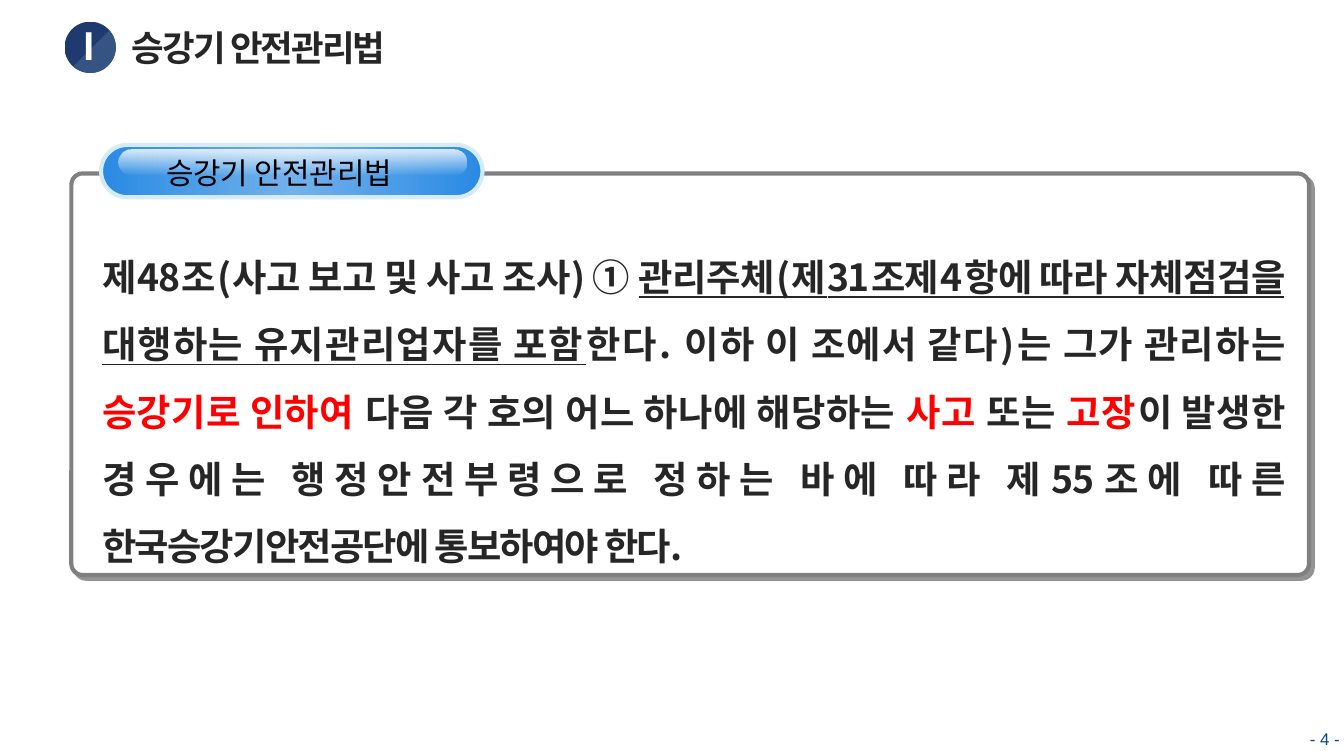
import pptx
import pptx.util
import pptx.dml.color
import pptx.enum.shapes
import pptx.enum.text
import pptx.oxml
import pptx.oxml.ns

Cm = pptx.util.Cm
Pt = pptx.util.Pt
Kind = pptx.enum.shapes.MSO_SHAPE
Align = pptx.enum.text.PP_ALIGN
qn = pptx.oxml.ns.qn
SPACE = pptx.oxml.ns.nsdecls("a")

SANS = "Noto Sans CJK KR"
DARK, RED, WHITE, BLACK = "262626", "FF0000", "FFFFFF", "000000"
NAVY, BLUE = "00488A", "2A8AE3"
NAME = "승강기 안전관리법"

LAW = [
    ("제48조(사고 보고 및 사고 조사) ① ", DARK, False),
    ("관리주체(제31조제4항에 따라 자체점검을 대행하는 유지관리업자를 포함", DARK, True),
    ("한다. 이하 이 조에서 같다)는 그가 관리하는 ", DARK, False),
    ("승강기로 인하여 ", RED, False),
    ("다음 각 호의 어느 하나에 해당하는 ", DARK, False),
    ("사고", RED, False),
    (" 또는 ", DARK, False),
    ("고장", RED, False),
    ("이 발생한 경우에는 행정안전부령으로 정하는 바에 따라 제55조에 따른 "
     "한국승강기안전공단에 통보하여야 한다.", DARK, False),
]
DISC = [(52, "1F3A6F", 100), (52, "355383", 100)]
PILL = [(0, BLUE, 100), (50, "71B1EC", 100), (100, BLUE, 100)]
GLOSS = [(0, WHITE, 83), (100, WHITE, 0)]


def tint(code):
    return pptx.dml.color.RGBColor.from_string(code)


def place(item, box):
    item.left, item.top, item.width, item.height = map(Cm, box)


def style(run, size, code, bold=False, face=SANS, gap=0):
    font = run.font
    font.size, font.bold, font.name = Pt(size), bold, face
    font.color.rgb = tint(code)
    props = run._r.get_or_add_rPr()
    if gap:
        props.set("spc", str(gap * 100))
    latin = props.find(qn("a:latin"))
    latin.addnext(pptx.oxml.parse_xml(f'<a:ea {SPACE} typeface="{SANS}"/>'))


def setup(item, wrap, pad=None):
    frame = item.text_frame
    frame.word_wrap = wrap
    frame.auto_size = pptx.enum.text.MSO_AUTO_SIZE.NONE
    frame.vertical_anchor = pptx.enum.text.MSO_ANCHOR.MIDDLE
    if pad is not None:
        frame.margin_left = frame.margin_right = Cm(pad)
        frame.margin_top = frame.margin_bottom = Cm(pad / 2)
    return frame


def write(item, text, align, wrap=False, pad=None, **look):
    frame = setup(item, wrap, pad)
    frame.text = text
    line = frame.paragraphs[0]
    line.alignment = align
    style(line.runs[0], **look)


def note(box):
    return slide.shapes.add_textbox(*map(Cm, box))


def shape(kind, box, fill, line=None, bend=None):
    item = slide.shapes.add_shape(kind, *map(Cm, box))
    item.shadow.inherit = False
    item.fill.solid()
    item.fill.fore_color.rgb = tint(fill)
    if bend is not None:
        item.adjustments[0] = bend
    if line:
        item.line.color.rgb = tint(line)
        item.line.width = Pt(2.25)
    else:
        item.line.fill.background()
    return item


def blend(item, stops, angle):
    marks = "".join(
        f'<a:gs pos="{at * 1000}"><a:srgbClr val="{code}">'
        f'<a:alpha val="{show * 1000}"/></a:srgbClr></a:gs>'
        for at, code, show in stops)
    props = item._element.spPr
    props.replace(props.find(qn("a:solidFill")), pptx.oxml.parse_xml(
        f'<a:gradFill {SPACE} rotWithShape="1"><a:gsLst>{marks}</a:gsLst>'
        f'<a:lin ang="{angle * 60000}" scaled="0"/></a:gradFill>'))


def shade(item, code, show, far, angle):
    item._element.spPr.find(qn("a:effectLst")).append(pptx.oxml.parse_xml(
        f'<a:outerShdw {SPACE} dist="{Pt(far)}" dir="{angle * 60000}" '
        f'algn="tl" rotWithShape="0"><a:srgbClr val="{code}">'
        f'<a:alpha val="{show * 1000}"/></a:srgbClr></a:outerShdw>'))


deck = pptx.Presentation()
deck.slide_width, deck.slide_height = Cm(25.4), Cm(14.29)
slide = deck.slides.add_slide(deck.slide_layouts[5])

write(note((22.53, 13.59, 2.97, 0.76)), "- 4 -", Align.RIGHT, wrap=True,
      pad=0.18, size=9, code=NAVY, face="Arial")

title = slide.shapes.title
place(title, (2.24, 0.36, 5.77, 1.07))
write(title, NAME, Align.LEFT, wrap=True, size=19, code=DARK, bold=True,
      face="Calibri", gap=-1)

disc = shape(Kind.OVAL, (1.22, 0.41, 0.97, 0.97), WHITE)
blend(disc, DISC, 45)
write(note((1.35, 0.43, 0.69, 0.86)), "Ⅰ", Align.CENTER, pad=0,
      size=20, code=WHITE, bold=True, gap=-1)

panel = shape(Kind.ROUNDED_RECTANGLE, (1.35, 3.28, 23.39, 7.59), WHITE,
              "808080", 0.028)
shade(panel, "292929", 50, 2.8, 45)

law = setup(note((1.68, 3.99, 22.83, 7.14)), True).paragraphs[0]
law.alignment = Align.JUSTIFY
law.line_spacing = Pt(36)
for text, code, under in LAW:
    run = law.add_run()
    run.text = text
    style(run, 20, code, True, gap=-1)
    run.font.underline = under

pill = shape(Kind.ROUNDED_RECTANGLE, (1.91, 2.74, 7.21, 0.99), BLUE,
             "D6EBFA", 0.5)
blend(pill, PILL, 0)
gloss = shape(Kind.ROUNDED_RECTANGLE, (2.24, 2.82, 6.58, 0.48), WHITE,
              bend=0.5)
blend(gloss, GLOSS, 90)
write(note((3.28, 2.87, 3.99, 0.79)), NAME, Align.CENTER, size=16, code=BLACK)

deck.save("out.pptx")
